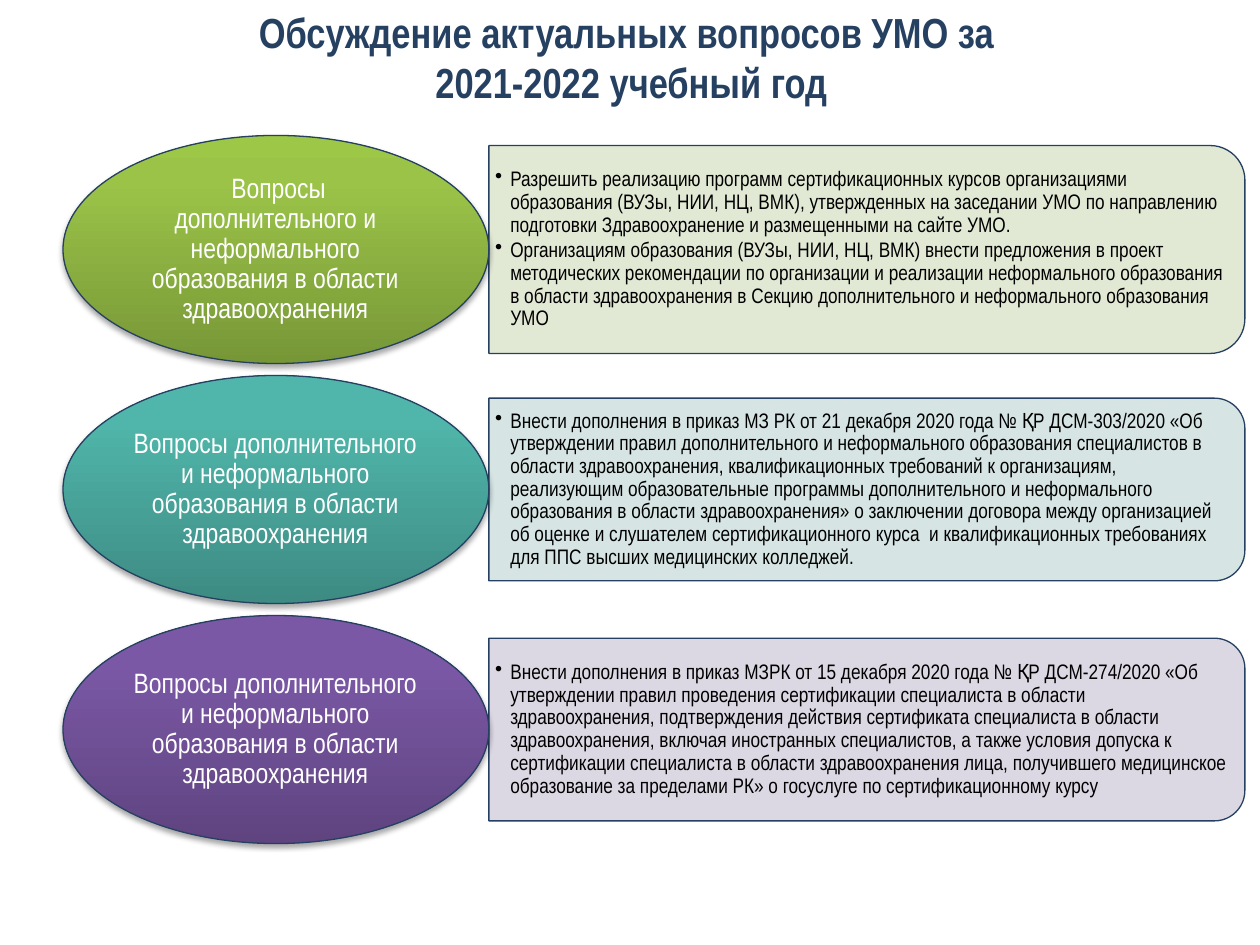
from lxml import etree
from pptx import Presentation
from pptx.dml.color import RGBColor
from pptx.enum import shapes, text
from pptx.oxml import ns
from pptx.util import Inches, Pt

FONT = "Arial Narrow"
NAVY = RGBColor(0x25, 0x40, 0x61)
WHITE = RGBColor(0xFF, 0xFF, 0xFF)
BLACK = RGBColor(0, 0, 0)

TITLE = "Обсуждение актуальных вопросов УМО за \v2021-2022 учебный год"
TOPIC = "Вопросы дополнительного и неформального образования в области здравоохранения"
ROWS = [
    {
        "topic": " " + TOPIC,
        "points": [
            "Разрешить реализацию программ сертификационных курсов организациями образования (ВУЗы, НИИ, НЦ, ВМК), утвержденных на заседании УМО по направлению подготовки Здравоохранение и размещенными на сайте УМО.",
            "Организациям образования (ВУЗы, НИИ, НЦ, ВМК) внести предложения в проект методических рекомендации по организации и реализации неформального образования в области здравоохранения в Секцию дополнительного и неформального образования УМО",
        ],
        "height": 1.65,
        "tint": RGBColor(0xDE, 0xE7, 0xD1),
        "stops": [(0, "779737"), (80, "9BC348"), (100, "9DC746")],
    },
    {
        "topic": TOPIC,
        "points": [
            "Внести дополнения в приказ МЗ РК от 21 декабря 2020 года № ҚР ДСМ-303/2020 «Об утверждении правил дополнительного и неформального образования специалистов в области здравоохранения, квалификационных требований к организациям, реализующим образовательные программы дополнительного и неформального образования в области здравоохранения» о заключении договора между организацией об оценке и слушателем сертификационного курса  и квалификационных требованиях для ППС высших медицинских колледжей.",
        ],
        "height": 1.45,
        "tint": RGBColor(0xD2, 0xE3, 0xE2),
        "stops": [(0, "3D8B83"), (80, "50B5AA"), (100, "4EB8AC")],
    },
    {
        "topic": TOPIC,
        "points": [
            "Внести дополнения в приказ МЗРК от 15 декабря 2020 года № ҚР ДСМ-274/2020 «Об утверждении правил проведения сертификации специалиста в области здравоохранения, подтверждения действия сертификата специалиста в области здравоохранения, включая иностранных специалистов, а также условия допуска к сертификации специалиста в области здравоохранения лица, получившего медицинское образование за пределами РК» о госуслуге по сертификационному курсу",
        ],
        "height": 1.45,
        "tint": RGBColor(0xD8, 0xD3, 0xE0),
        "stops": [(0, "5F4480"), (80, "7B58A6"), (100, "7C57A8")],
    },
]

OVAL_X, OVAL_W, OVAL_H = 0.5, 3.38, 1.81
PANEL_X, PANEL_W = OVAL_X + OVAL_W, 6
FIRST_MIDDLE, ROW_STEP = 1.98, 1.905


def add_xml(parent, tag, **attrs):
    return etree.SubElement(parent, ns.qn(tag), {k: str(v) for k, v in attrs.items()})


def add_colour(parent, colour, alpha=None):
    clr = add_xml(parent, "a:srgbClr", val=colour)
    if alpha:
        add_xml(clr, "a:alpha", val=alpha * 1000)


def add_outlined(s, kind, x, middle, w, h):
    sp = s.shapes.add_shape(kind, Inches(x), Inches(middle - h / 2), Inches(w), Inches(h))
    sp.line.color.rgb = NAVY
    sp.line.width = Pt(0.75)
    sp.shadow.inherit = False
    return sp


def add_panel(s, middle, row):
    h = row["height"]
    x = PANEL_X + (PANEL_W - h) / 2
    sp = add_outlined(s, shapes.MSO_SHAPE.ROUND_2_SAME_RECTANGLE, x, middle, h, PANEL_W)
    sp.rotation = 90
    sp.fill.solid()
    sp.fill.fore_color.rgb = row["tint"]
    clr = sp._element.spPr.find(ns.qn("a:solidFill"))[0]
    add_xml(clr, "a:alpha", val=90000)


def add_oval(s, middle, row):
    sp = add_outlined(s, shapes.MSO_SHAPE.OVAL, OVAL_X, middle, OVAL_W, OVAL_H)
    sp.fill.gradient()
    sp.fill.gradient_angle = 90
    stops = sp._element.spPr.find(".//" + ns.qn("a:gsLst"))
    for gs in list(stops):
        stops.remove(gs)
    for pos, colour in row["stops"]:
        add_colour(add_xml(stops, "a:gs", pos=pos * 1000), colour)
    effects = sp._element.spPr.find(ns.qn("a:effectLst"))
    shadow = add_xml(effects, "a:outerShdw", blurRad=Pt(3.1), dist=Pt(1.8),
                     dir=90 * 60000, rotWithShape=0)
    add_colour(shadow, "000000", 35)


def add_text(s, box, lines, size, colour, inset=(0.1, 0.05), bold=False,
             align=text.PP_ALIGN.CENTER, anchor=text.MSO_ANCHOR.MIDDLE):
    tf = s.shapes.add_textbox(*map(Inches, box)).text_frame
    tf.word_wrap = True
    tf.vertical_anchor = anchor
    tf.margin_left = tf.margin_right = Inches(inset[0])
    tf.margin_top = tf.margin_bottom = Inches(inset[1])
    tf.text = "\n".join(lines)
    for p in tf.paragraphs:
        p.alignment = align
        for r in p.runs:
            r.font.name = FONT
            r.font.size = Pt(size)
            r.font.bold = bold
            r.font.color.rgb = colour
    return tf


def space_lines(tf, after, bullet=False):
    for p in tf.paragraphs:
        p.line_spacing = 0.9
        pPr = p._p.get_or_add_pPr()
        add_xml(add_xml(pPr, "a:spcAft"), "a:spcPct", val=after * 1000)
        if bullet:
            p.level = 1
            pPr.set("marL", str(Inches(0.12)))
            pPr.set("indent", str(-Inches(0.12)))
            add_xml(pPr, "a:buChar", char="•")


def main():
    prs = Presentation()
    prs.slide_width, prs.slide_height = Inches(10), Inches(7.5)
    s = prs.slides.add_slide(prs.slide_layouts[6])
    for i, row in enumerate(ROWS):
        middle = FIRST_MIDDLE + i * ROW_STEP
        add_panel(s, middle, row)
        h = row["height"] - 0.15
        tf = add_text(s, (PANEL_X, middle - h / 2, 5.92, h), row["points"], 12, BLACK,
                      (0.05, 0.03), align=text.PP_ALIGN.LEFT)
        space_lines(tf, 15, bullet=True)
        add_oval(s, middle, row)
        tf = add_text(s, (0.99, middle - 0.64, 2.39, 1.28), [row["topic"]], 16, WHITE,
                      (0.07, 0.03))
        space_lines(tf, 35)
    add_text(s, (0.51, 0, 9, 1.25), [TITLE], 24, NAVY, bold=True,
             anchor=text.MSO_ANCHOR.TOP)
    prs.save("out.pptx")


if __name__ == "__main__":
    main()
